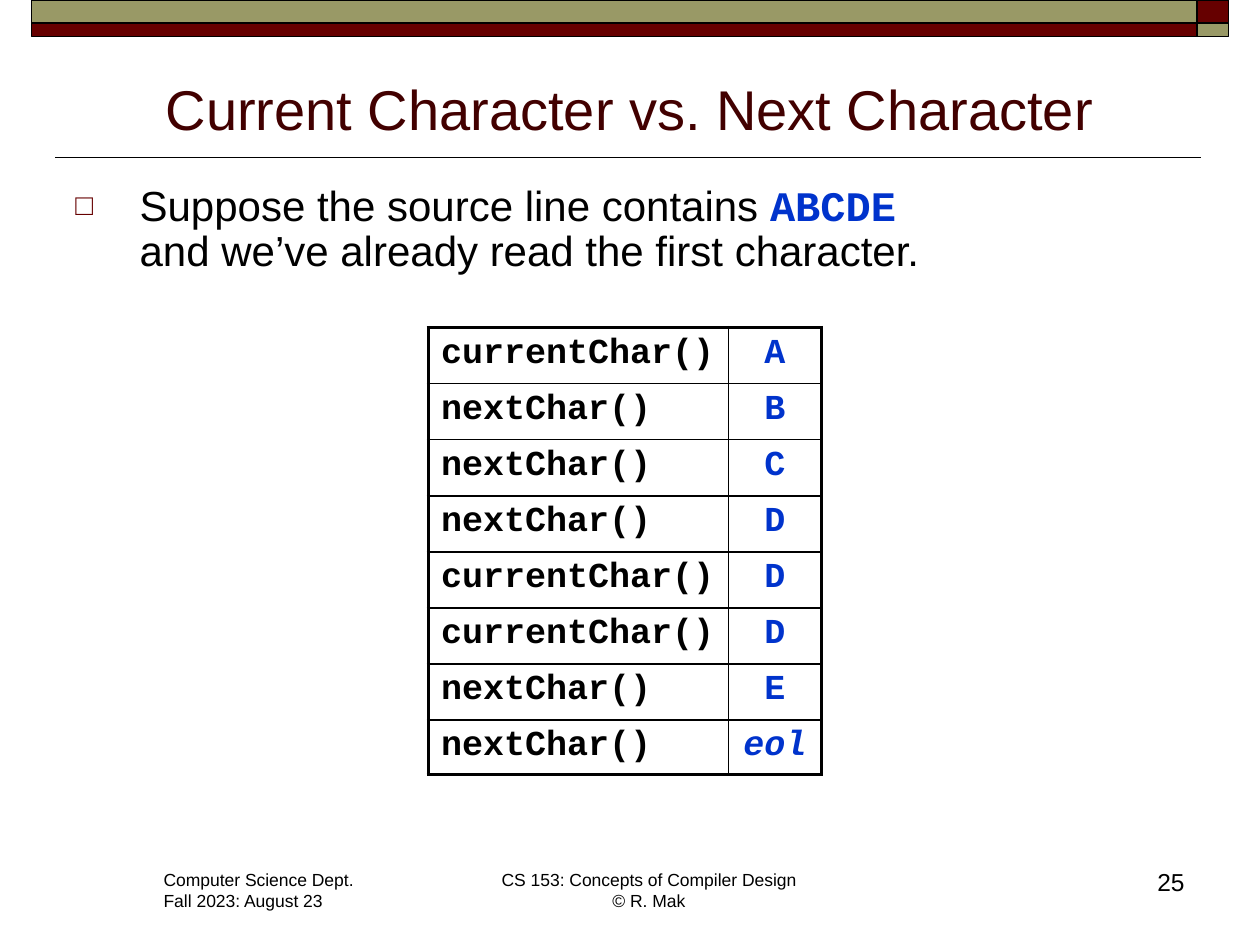
from dataclasses import dataclass

from lxml import etree
from pptx import Presentation
from pptx.dml.color import RGBColor
from pptx.enum import shapes, text
from pptx.oxml import ns
from pptx.util import Inches, Pt

COLORS = {"black": "000000", "maroon": "660000", "title": "420000",
          "olive": "999966", "blue": "0033CC"}
ALIGN = text.PP_ALIGN


@dataclass(frozen=True)
class Box:
    left: float
    top: float
    width: float
    height: float

    def lengths(self) -> list:
        return [Inches(v) for v in (self.left, self.top, self.width, self.height)]


@dataclass(frozen=True)
class Style:
    size: float
    color: str = "black"
    font: str = "Arial"
    bold: bool = False
    italic: bool = False


@dataclass(frozen=True)
class Band:
    box: Box
    color: str


@dataclass(frozen=True)
class Call:
    function: str
    result: str
    italic: bool = False


BANDS = [
    Band(Box(9.5, 0, 0.25, 0.18), "maroon"),
    Band(Box(0.25, 0, 9.25, 0.18), "olive"),
    Band(Box(0.25, 0.18, 9.25, 0.11), "maroon"),
    Band(Box(9.5, 0.18, 0.25, 0.11), "olive"),
]
CALLS = [
    Call("currentChar()", "A"),
    Call("nextChar()", "B"),
    Call("nextChar()", "C"),
    Call("nextChar()", "D"),
    Call("currentChar()", "D"),
    Call("currentChar()", "D"),
    Call("nextChar()", "E"),
    Call("nextChar()", "eol", italic=True),
]
FOOTER = Style(10)


def rgb(name: str) -> RGBColor:
    return RGBColor.from_string(COLORS[name])


def add_run(paragraph, words: str, style: Style) -> None:
    run = paragraph.add_run()
    run.text = words
    font = run.font
    font.name, font.size = style.font, Pt(style.size)
    font.bold, font.italic = style.bold, style.italic
    font.color.rgb = rgb(style.color)


def add_text_box(slide, box: Box, wrap: bool = True, anchor=text.MSO_ANCHOR.TOP):
    frame = slide.shapes.add_textbox(*box.lengths()).text_frame
    frame.word_wrap = wrap
    frame.vertical_anchor = anchor
    return frame


def add_rule(slide) -> None:
    rule = slide.shapes.add_connector(
        shapes.MSO_CONNECTOR.STRAIGHT, Inches(9.53), Inches(1.25), Inches(0.44), Inches(1.25))
    rule.line.color.rgb = rgb("black")
    rule.line.width = Pt(1)
    etree.SubElement(rule._element.spPr, ns.qn("a:effectLst"))


def add_band(slide, band: Band) -> None:
    shape = slide.shapes.add_shape(shapes.MSO_SHAPE.RECTANGLE, *band.box.lengths())
    shape.shadow.inherit = False
    shape.fill.solid()
    shape.fill.fore_color.rgb = rgb(band.color)
    shape.line.color.rgb = rgb("black")
    shape.line.width = Pt(1)


def add_bullet(paragraph, character: str, color: str, percent: int) -> None:
    properties = paragraph._p.get_or_add_pPr()
    properties.set("marL", str(Inches(0.51)))
    properties.set("indent", str(-Inches(0.51)))
    bullet_color = etree.SubElement(properties, ns.qn("a:buClr"))
    etree.SubElement(bullet_color, ns.qn("a:srgbClr"), val=COLORS[color])
    etree.SubElement(properties, ns.qn("a:buSzPct"), val=str(percent * 1000))
    etree.SubElement(properties, ns.qn("a:buFont"), typeface="Arial")
    etree.SubElement(properties, ns.qn("a:buChar"), char=character)


def add_body(slide) -> None:
    paragraph = add_text_box(slide, Box(0.5, 1.42, 9.02, 0.83)).paragraphs[0]
    paragraph.line_spacing = 0.9
    add_bullet(paragraph, "□", "maroon", 70)
    add_run(paragraph, "Suppose the source line contains ", Style(24))
    add_run(paragraph, "ABCDE ", Style(24, "blue", "Courier New", bold=True))
    paragraph.add_line_break()
    add_run(paragraph, "and we’ve already read the first character.", Style(24))


def set_borders(cell, widths: dict[str, float]) -> None:
    properties = cell._tc.get_or_add_tcPr()
    for side, width in widths.items():
        line = etree.SubElement(properties, ns.qn(f"a:ln{side}"), w=str(Pt(width)))
        fill = etree.SubElement(line, ns.qn("a:solidFill"))
        etree.SubElement(fill, ns.qn("a:srgbClr"), val=COLORS["black"])


def add_call_table(slide, calls: list[Call]) -> None:
    box = Box(3.4, 2.6, 3.12, 3.53)
    table = slide.shapes.add_table(len(calls), 2, *box.lengths()).table
    table.first_row = table.horz_banding = False
    for column, width in zip(table.columns, (2.38, 0.74)):
        column.width = Inches(width)
    thin, thick, last = 1, 2.25, len(calls) - 1
    for index, call in enumerate(calls):
        table.rows[index].height = Inches(0.41 if index == last else 0.445)
        entries = [
            (call.function, Style(20, "black", "Courier New", True), ALIGN.LEFT),
            (call.result, Style(20, "blue", "Courier New", True, call.italic), ALIGN.CENTER),
        ]
        for column, (words, style, alignment) in enumerate(entries):
            cell = table.cell(index, column)
            paragraph = cell.text_frame.paragraphs[0]
            paragraph.alignment = alignment
            add_run(paragraph, words, style)
            set_borders(cell, {
                "L": thick if column == 0 else thin,
                "R": thick if column == 1 else thin,
                "T": thick if index == 0 else thin,
                "B": thick if index == last else thin,
            })
            cell.fill.background()


def add_footers(slide) -> None:
    department = add_text_box(slide, Box(1.2, 6.85, 1.72, 0.44), wrap=False)
    add_run(department.paragraphs[0], "Computer Science Dept.", FOOTER)
    add_run(department.add_paragraph(), "Fall 2023: August 23", FOOTER)

    course = add_text_box(slide, Box(3.87, 6.85, 2.56, 0.44), wrap=False).paragraphs[0]
    course.alignment = ALIGN.CENTER
    add_run(course, "CS 153: Concepts of Compiler Design", FOOTER)
    course.add_line_break()
    add_run(course, "© R. Mak", FOOTER)

    number = add_text_box(slide, Box(7.42, 6.83, 2.08, 0.5)).paragraphs[0]
    number.alignment = ALIGN.RIGHT
    add_run(number, "25", Style(14))


def main() -> None:
    """Build the slide on current and next characters."""
    presentation = Presentation()
    presentation.slide_width, presentation.slide_height = Inches(10), Inches(7.5)
    slide = presentation.slides.add_slide(presentation.slide_layouts[6])
    add_rule(slide)
    for band in BANDS:
        add_band(slide, band)
    add_footers(slide)
    title = add_text_box(slide, Box(0.5, 0.45, 9, 0.72), anchor=text.MSO_ANCHOR.BOTTOM)
    title.paragraphs[0].alignment = ALIGN.CENTER
    add_run(title.paragraphs[0], "Current Character vs. Next Character", Style(32, "title"))
    add_body(slide)
    add_call_table(slide, CALLS)
    presentation.save("out.pptx")


if __name__ == "__main__":
    main()
